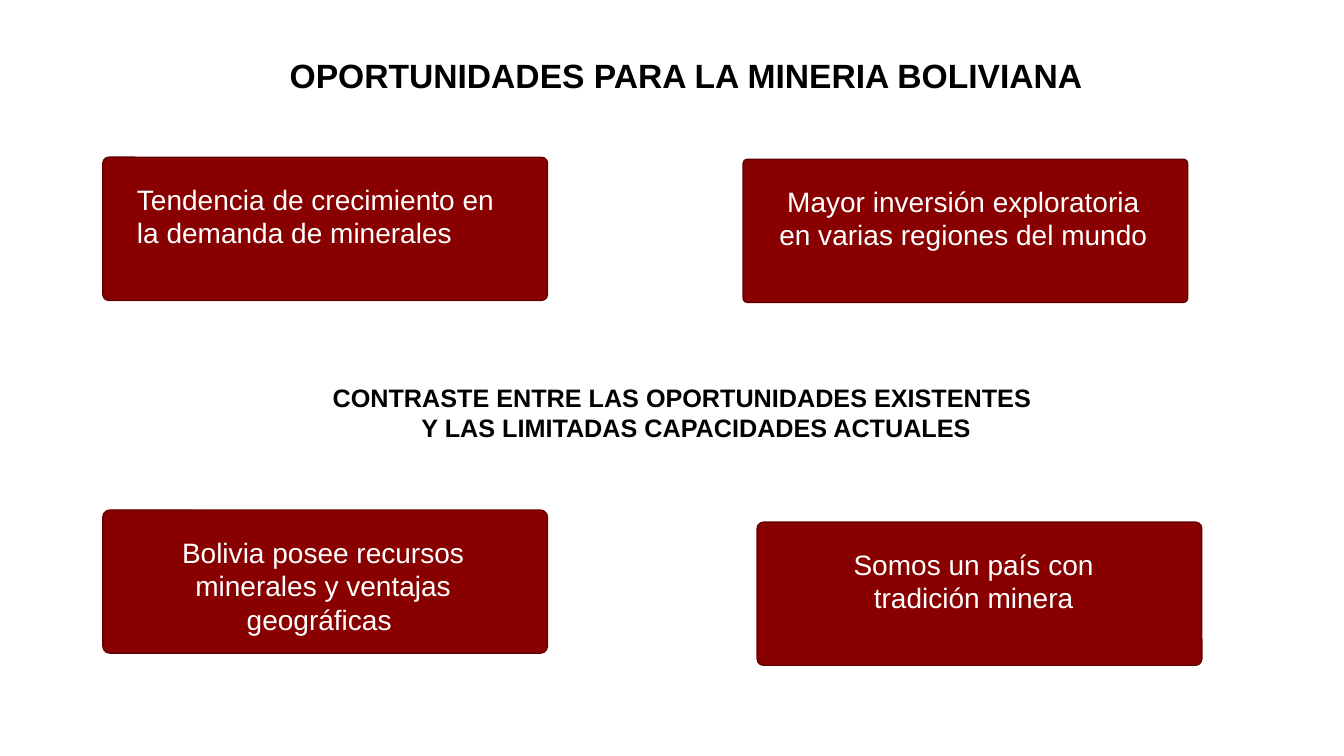
import pptx
import pptx.util
import pptx.dml.color
import pptx.enum.shapes
import pptx.enum.text

Inches = pptx.util.Inches
RGBColor = pptx.dml.color.RGBColor
Shape = pptx.enum.shapes.MSO_SHAPE
Align = pptx.enum.text.PP_ALIGN

BLACK = RGBColor(0x00, 0x00, 0x00)
WHITE = RGBColor(0xFF, 0xFF, 0xFF)
RED = RGBColor(0x88, 0x00, 0x00)
EDGE = RGBColor(0x65, 0x00, 0x00)


def write(shape, text, size, color, bold=False, align=Align.CENTER):
    frame = shape.text_frame
    frame.text = text
    frame.word_wrap = True
    frame.auto_size = pptx.enum.text.MSO_AUTO_SIZE.SHAPE_TO_FIT_TEXT
    frame.vertical_anchor = pptx.enum.text.MSO_ANCHOR.TOP
    for line in frame.paragraphs:
        line.alignment = align
        line.font.name = "Arial"
        line.font.size = pptx.util.Pt(size)
        line.font.bold = bold
        line.font.color.rgb = color


deck = pptx.Presentation()
deck.slide_width = Inches(13.33)
deck.slide_height = Inches(7.5)
slide = deck.slides.add_slide(deck.slide_layouts.get_by_name("Title Only"))

title = slide.shapes.title
title.left, title.top = Inches(2.51), Inches(0.49)
title.width, title.height = Inches(8.59), Inches(0.5)
write(title, "OPORTUNIDADES PARA LA MINERIA BOLIVIANA", 24, BLACK, bold=True)

contrast = slide.shapes.add_textbox(Inches(3.12), Inches(3.74), Inches(7.36), Inches(0.71))
write(contrast, "CONTRASTE ENTRE LAS OPORTUNIDADES EXISTENTES \n"
      "Y LAS LIMITADAS CAPACIDADES ACTUALES ", 18, BLACK, bold=True)
second = contrast.text_frame.paragraphs[1]
second._p.get_or_add_pPr().set("marL", str(Inches(0.28)))

# Left, top, corner radius, label height, alignment, text
cards = [
    (1.02, 1.56, 0.041, 0.79, Align.LEFT,
     "Tendencia de crecimiento en la demanda de minerales"),
    (7.37, 1.58, 0.031, 0.77, Align.CENTER,
     "Mayor inversión exploratoria en varias regiones del mundo"),
    (1.02, 5.06, 0.049, 1.11, Align.CENTER,
     "Bolivia posee recursos minerales y ventajas geográficas "),
    (7.51, 5.18, 0.043, 0.77, Align.CENTER,
     "Somos un país con \ntradición minera "),
]
for left, top, radius, height, align, text in cards:
    group = slide.shapes.add_group_shape()
    card = group.shapes.add_shape(
        Shape.ROUNDED_RECTANGLE, Inches(left), Inches(top), Inches(4.41), Inches(1.42))
    card.adjustments[0] = radius
    card.line.color.rgb = EDGE
    card.line.width = pptx.util.Pt(1)
    label = group.shapes.add_shape(
        Shape.RECTANGLE, Inches(left + 0.24), Inches(top + 0.2), Inches(3.89), Inches(height))
    label.line.fill.background()
    for shape in (card, label):
        shape.shadow.inherit = False
        shape.fill.solid()
        shape.fill.fore_color.rgb = RED
    write(label, text, 20, WHITE, align=align)

deck.save("out.pptx")
